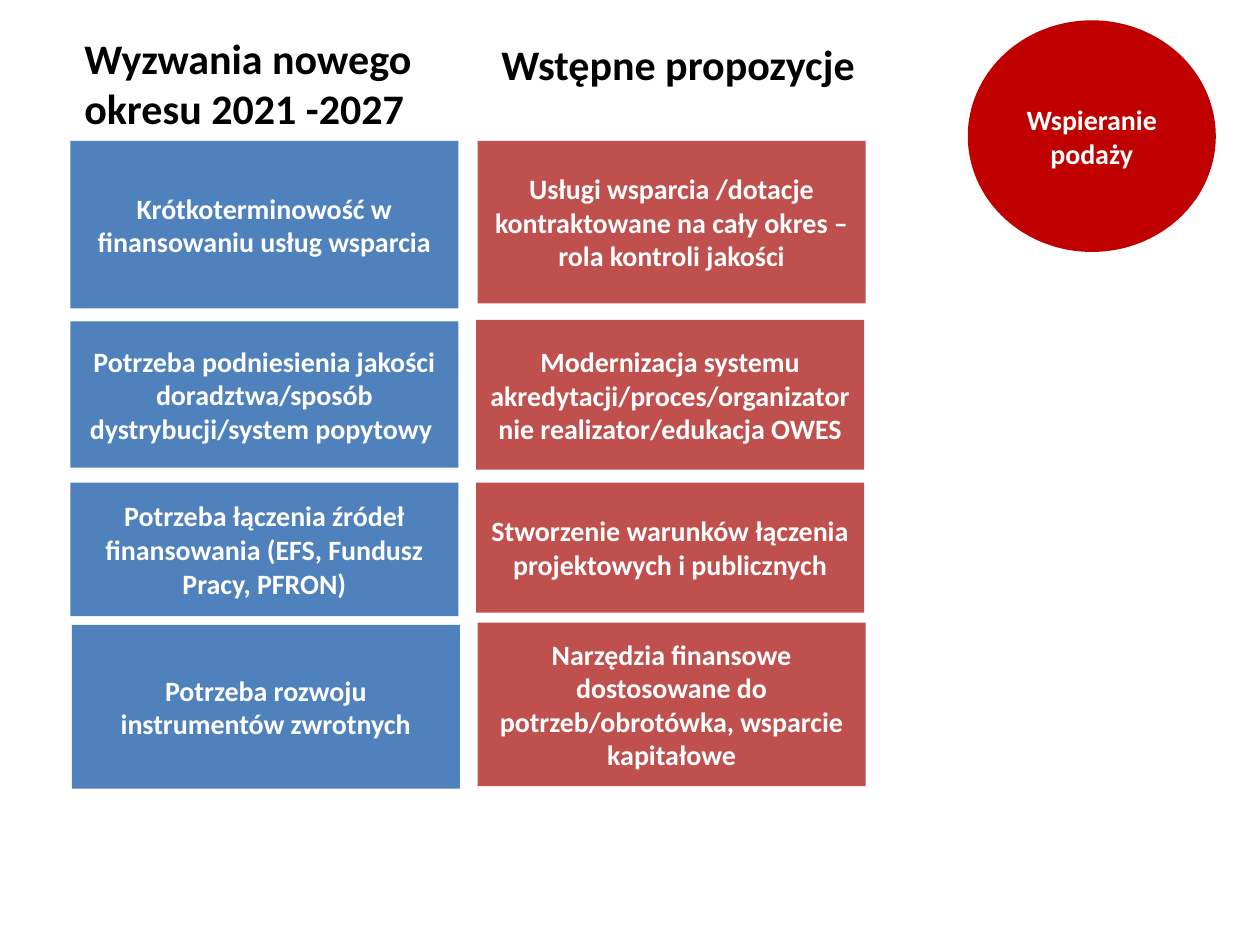
from dataclasses import dataclass

from pptx import Presentation
from pptx.dml.color import RGBColor
from pptx.enum.shapes import MSO_SHAPE as Preset
from pptx.enum.text import MSO_ANCHOR as Anchor, MSO_AUTO_SIZE as AutoSize, PP_ALIGN as Align
from pptx.slide import Slide
from pptx.text.text import TextFrame
from pptx.util import Cm, Pt

COLOURS = {
    "challenge": "4F81BD",
    "proposal": "C0504D",
    "supply": "C00000",
    "heading": "000000",
    "label": "FFFFFF",
}
FONT = "Calibri"
BOX_WIDTH = 7.82


@dataclass(frozen=True)
class Panel:
    text: str
    colour: str
    left: float
    top: float
    height: float
    width: float = BOX_WIDTH
    preset: Preset = Preset.RECTANGLE


@dataclass(frozen=True)
class Heading:
    text: str
    left: float
    top: float
    width: float
    height: float


HEADINGS = [
    Heading("Wyzwania nowego okresu 2021 -2027", 1.45, 0.53, 7.92, 2.31),
    Heading("Wstępne propozycje", 9.86, 0.66, 10.72, 1.27),
]

PANELS = [
    Panel("Krótkoterminowość w finansowaniu usług wsparcia",
          "challenge", 1.42, 2.84, 3.38),
    Panel("Potrzeba podniesienia jakości doradztwa/sposób dystrybucji/system popytowy ",
          "challenge", 1.42, 6.48, 2.95),
    Panel("Potrzeba łączenia źródeł finansowania (EFS, Fundusz Pracy, PFRON)",
          "challenge", 1.42, 9.73, 2.69),
    Panel("Potrzeba rozwoju instrumentów zwrotnych",
          "challenge", 1.45, 12.6, 3.3),
    Panel("Usługi wsparcia /dotacje kontraktowane na cały okres – rola kontroli jakości",
          "proposal", 9.63, 2.84, 3.28),
    Panel("Modernizacja systemu akredytacji/proces/organizator nie realizator/edukacja OWES",
          "proposal", 9.6, 6.45, 3.02),
    Panel("Stworzenie warunków łączenia projektowych i publicznych",
          "proposal", 9.6, 9.73, 2.62),
    Panel("Narzędzia finansowe dostosowane do potrzeb/obrotówka, wsparcie kapitałowe",
          "proposal", 9.63, 12.55, 3.3),
    Panel("Wspieranie podaży", "supply", 19.51, 0.41, 4.67, 5, Preset.OVAL),
]


def colour_of(name: str) -> RGBColor:
    return RGBColor.from_string(COLOURS[name])


def write(frame: TextFrame, text: str, size: int, colour: str, align: Align) -> None:
    frame.word_wrap = True
    para = frame.paragraphs[0]
    para.alignment = align
    span = para.add_run()
    span.text = text
    span.font.name = FONT
    span.font.size = Pt(size)
    span.font.bold = True
    span.font.color.rgb = colour_of(colour)


def draw_heading(page: Slide, heading: Heading) -> None:
    box = page.shapes.add_textbox(
        Cm(heading.left), Cm(heading.top), Cm(heading.width), Cm(heading.height))
    write(box.text_frame, heading.text, 24, "heading", Align.LEFT)
    box.text_frame.auto_size = AutoSize.SHAPE_TO_FIT_TEXT


def draw_panel(page: Slide, panel: Panel) -> None:
    box = page.shapes.add_shape(
        panel.preset, Cm(panel.left), Cm(panel.top), Cm(panel.width), Cm(panel.height))
    box.shadow.inherit = False
    box.fill.solid()
    box.fill.fore_color.rgb = colour_of(panel.colour)
    box.line.fill.background()
    box.text_frame.vertical_anchor = Anchor.MIDDLE
    write(box.text_frame, panel.text, 16, "label", Align.CENTER)


def main() -> None:
    deck = Presentation()
    deck.slide_width, deck.slide_height = Cm(25.4), Cm(19.05)
    page = deck.slides.add_slide(deck.slide_layouts[6])
    for heading in HEADINGS:
        draw_heading(page, heading)
    for panel in PANELS:
        draw_panel(page, panel)
    deck.save("out.pptx")


if __name__ == "__main__":
    main()
